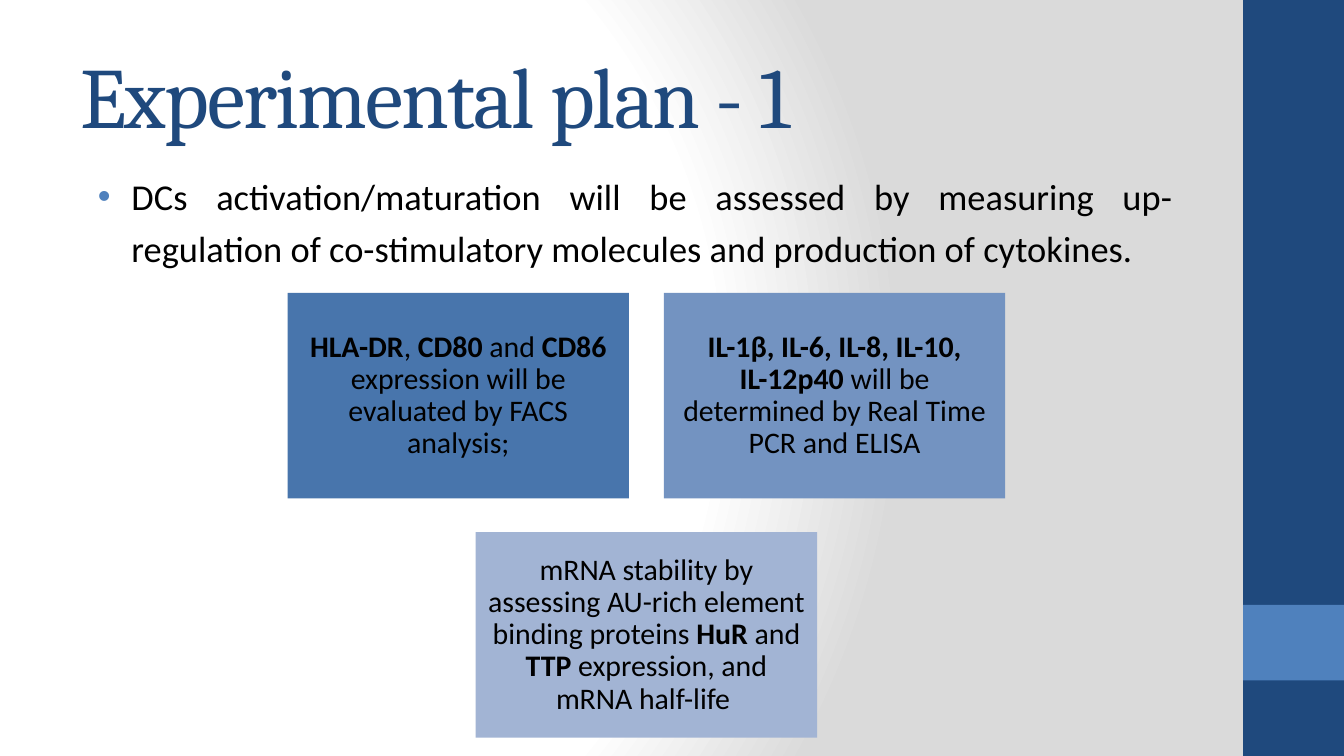
from lxml import etree
from pptx import Presentation
from pptx.dml.color import RGBColor
from pptx.enum import shapes, text
from pptx.oxml import parse_xml
from pptx.oxml.ns import nsdecls, qn
from pptx.util import Inches, Pt

COLORS = {"navy": "1F497D", "blue": "4F81BD", "black": "000000",
          "white": "FFFFFF", "grey": "DADADA"}
SLIDE_WIDTH = 10
SLIDE_HEIGHT = SLIDE_WIDTH * 9 / 16

TITLE = "Experimental plan - 1"
BODY = ("DCs activation/maturation will be assessed by measuring up-regulation "
        "of co-stimulatory molecules and production of cytokines.")

# Each box: fill, then runs as (text, bold)
BOX_ROWS = [
    [
        ("4875AC", [("HLA-DR", True), (", ", False), ("CD80", True),
                    (" and ", False), ("CD86", True),
                    (" expression will be evaluated by FACS analysis;", False)]),
        ("7393C1", [("IL-1β, IL-6, IL-8, IL-10, IL-12p40", True),
                    (" will be determined by Real Time PCR and ELISA", False)]),
    ],
    [
        ("A2B4D4", [("mRNA stability by assessing AU-rich element binding proteins ", False),
                    ("HuR", True), (" and ", False), ("TTP", True),
                    (" expression, and mRNA half-life ", False)]),
    ],
]
BOX_WIDTH, BOX_HEIGHT = 2.54, 1.53
COLUMN_GAP, ROW_GAP = 0.26, 0.25
BOX_TOP, BOX_CENTER = 2.18, 4.81

# Side bands: left, top, width, height, colour
BANDS = [(9.25, 0, 0.75, SLIDE_HEIGHT, "navy"),
         (9.25, SLIDE_HEIGHT * 0.8, 0.75, SLIDE_HEIGHT / 10, "blue")]


def rgb(value):
    return RGBColor.from_string(value)


def add_rectangle(slide, left, top, width, height, fill):
    shape = slide.shapes.add_shape(
        shapes.MSO_SHAPE.RECTANGLE,
        Inches(left), Inches(top), Inches(width), Inches(height))
    shape.shadow.inherit = False
    shape.fill.solid()
    shape.fill.fore_color.rgb = rgb(fill)
    shape.line.fill.background()
    return shape


def add_text(slide, left, top, width, height, content):
    box = slide.shapes.add_textbox(
        Inches(left), Inches(top), Inches(width), Inches(height))
    box.text_frame.word_wrap = True
    paragraph = box.text_frame.paragraphs[0]
    paragraph.text = content
    return box.text_frame, paragraph


def style_font(paragraph, name, size, color):
    paragraph.font.name = name
    paragraph.font.size = Pt(size)
    paragraph.font.color.rgb = rgb(COLORS[color])


def set_background(slide):
    slide.background.fill.solid()
    properties = slide.element.find(".//" + qn("p:bgPr"))
    stops = "".join(
        f'<a:gs pos="{position * 1000}"><a:srgbClr val="{COLORS[color]}"/></a:gs>'
        for position, color in [(0, "white"), (75, "white"), (100, "grey")])
    gradient = parse_xml(
        f'<a:gradFill {nsdecls("a")} rotWithShape="1"><a:gsLst>{stops}</a:gsLst>'
        '<a:path path="circle"><a:fillToRect l="20000" t="50000" r="100000" b="50000"/>'
        '</a:path></a:gradFill>')
    properties.replace(properties[0], gradient)


def add_bullet(paragraph, margin, indent):
    properties = paragraph._p.get_or_add_pPr()
    properties.set("marL", str(Inches(margin)))
    properties.set("indent", str(Inches(indent)))
    bullet_color = etree.SubElement(properties, qn("a:buClr"))
    etree.SubElement(bullet_color, qn("a:srgbClr"), val=COLORS["blue"])
    etree.SubElement(properties, qn("a:buFont"), typeface="Arial")
    etree.SubElement(properties, qn("a:buChar"), char="•")


def add_box(slide, left, top, fill, runs):
    shape = add_rectangle(slide, left, top, BOX_WIDTH, BOX_HEIGHT, fill)
    frame = shape.text_frame
    frame.word_wrap = True
    frame.vertical_anchor = text.MSO_ANCHOR.MIDDLE
    frame.margin_left = frame.margin_right = Inches(0.07)
    frame.margin_top = frame.margin_bottom = Inches(0.07)
    paragraph = frame.paragraphs[0]
    paragraph.alignment = text.PP_ALIGN.CENTER
    paragraph.line_spacing = 0.9
    style_font(paragraph, "Calibri", 16, "black")
    for content, bold in runs:
        run = paragraph.add_run()
        run.text = content
        run.font.bold = bold


def main():
    presentation = Presentation()
    presentation.slide_width = Inches(SLIDE_WIDTH)
    presentation.slide_height = Inches(SLIDE_HEIGHT)
    slide = presentation.slides.add_slide(presentation.slide_layouts[6])
    set_background(slide)

    # Side bands
    for *place, color in BANDS:
        add_rectangle(slide, *place, COLORS[color])

    # Title
    frame, paragraph = add_text(slide, 0.5, 0.23, 8.33, 0.94, TITLE)
    frame.vertical_anchor = text.MSO_ANCHOR.MIDDLE
    style_font(paragraph, "Cambria", 46, "navy")
    paragraph.runs[0].font._element.set("spc", "-100")

    # Bulleted statement
    frame, paragraph = add_text(slide, 0.5, 1.18, 8.33, 1, BODY)
    paragraph.alignment = text.PP_ALIGN.JUSTIFY
    paragraph.line_spacing = 1.2
    paragraph.space_before = Pt(4)
    add_bullet(paragraph, 0.38, -0.25)
    style_font(paragraph, "Calibri", 19.5, "black")

    # Rows of boxes, each row centred
    for row, boxes in enumerate(BOX_ROWS):
        row_width = len(boxes) * (BOX_WIDTH + COLUMN_GAP) - COLUMN_GAP
        top = BOX_TOP + row * (BOX_HEIGHT + ROW_GAP)
        for column, (fill, runs) in enumerate(boxes):
            left = BOX_CENTER - row_width / 2 + column * (BOX_WIDTH + COLUMN_GAP)
            add_box(slide, left, top, fill, runs)

    presentation.save("out.pptx")


if __name__ == "__main__":
    main()
